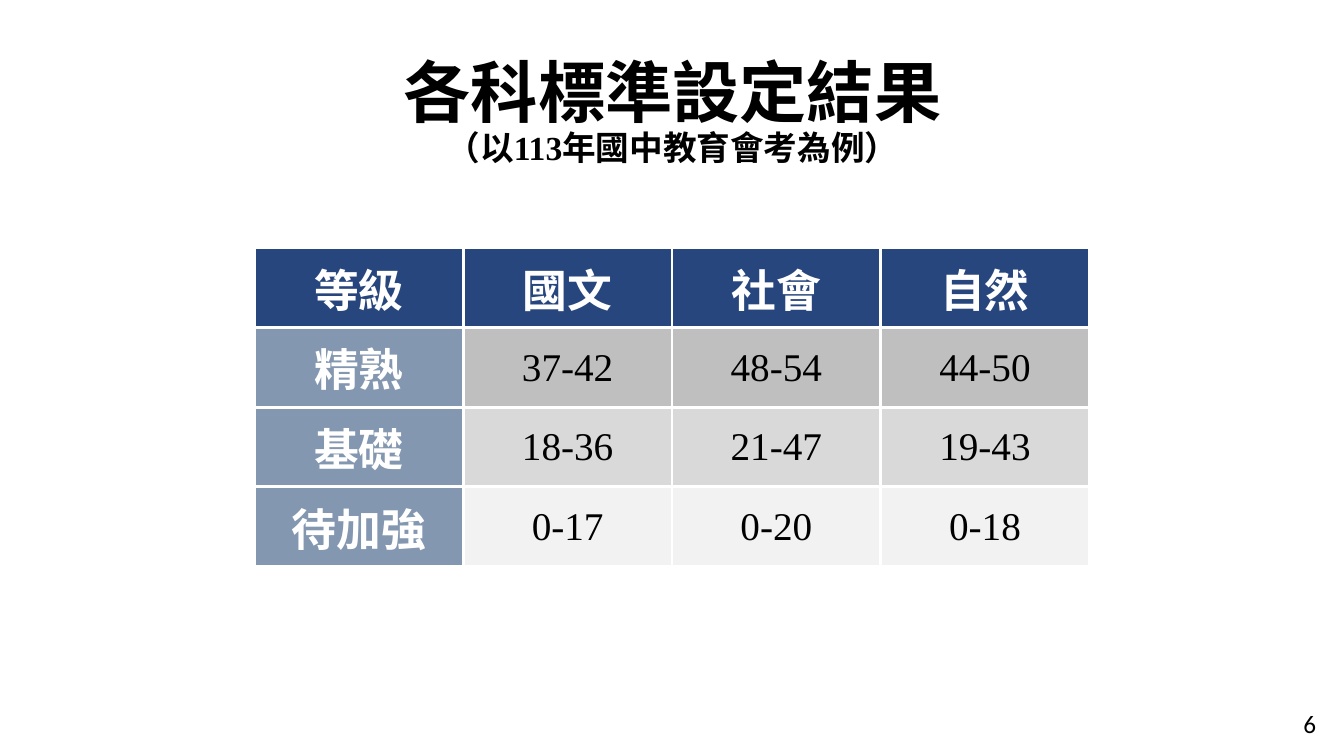
from lxml import etree
from pptx import Presentation
from pptx.dml.color import RGBColor
from pptx.enum.text import MSO_ANCHOR, MSO_AUTO_SIZE, PP_ALIGN
from pptx.oxml.ns import qn
from pptx.util import Inches, Pt

CENTER, MIDDLE, NO_FIT = PP_ALIGN.CENTER, MSO_ANCHOR.MIDDLE, MSO_AUTO_SIZE.NONE

HEADING = "各科標準設定結果"
SUBTITLE = [("（以", "Calibri"), ("113", "Times New Roman"), ("年國中教育會考為例）", "Calibri")]
SCORES = [
    ("等級", "國文", "社會", "自然"),
    ("精熟", "37-42", "48-54", "44-50"),
    ("基礎", "18-36", "21-47", "19-43"),
    ("待加強", "0-17", "0-20", "0-18"),
]
PAGE_NUMBER = "6"

WIDTH, HEIGHT = 13.33, 7.5
COLUMN_WIDTH, ROW_HEIGHT, TABLE_TOP = 2.07, 0.79, 2.46
HEADER_FILL, LEVEL_FILL = "27467D", "8497B0"
SCORE_FILLS = ["BFBFBF", "D9D9D9", "F2F2F2"]
HEADER_MARGINS = (0.1, 0.05, 0.1, 0.05)
LEVEL_MARGINS = (0.02, 0, 0.02, 0)
SCORE_MARGINS = (0.01, 0.01, 0.01, 0)
LABEL_FONT = {"name": "Times New Roman", "size": Pt(32), "bold": True}
SCORE_FONT = {"name": "Times New Roman", "size": Pt(28), "bold": False}
HEADING_FONT = {"name": "Times New Roman", "size": Pt(48), "bold": True}
SUBTITLE_FONT = {"size": Pt(24), "bold": True}
PAGE_FONT = {"name": "Calibri", "size": Pt(18)}


def apply(target, values):
    """Set each named attribute on the target."""
    for name, value in values.items():
        setattr(target, name, value)


def paint(color_format, color):
    """Give a colour format a hex colour."""
    color_format.rgb = RGBColor.from_string(color)


def add_text(paragraph, text, font, color):
    """Append a formatted run to a paragraph."""
    run = paragraph.add_run()
    run.text = text
    apply(run.font, font)
    paint(run.font.color, color)


def add_borders(cell, color, width):
    """Draw the four borders of a cell."""
    properties = cell._tc.get_or_add_tcPr()
    for position, side in enumerate(("lnL", "lnR", "lnT", "lnB")):
        line = etree.Element(qn(f"a:{side}"), w=str(Pt(width)))
        fill = etree.SubElement(line, qn("a:solidFill"))
        etree.SubElement(fill, qn("a:srgbClr"), val=color)
        properties.insert(position, line)


def cell_style(row, column):
    """Return fill, margins, font and text colour for a table position."""
    if row == 0:
        return HEADER_FILL, HEADER_MARGINS, LABEL_FONT, "FFFFFF"
    if column == 0:
        return LEVEL_FILL, LEVEL_MARGINS, LABEL_FONT, "FFFFFF"
    return SCORE_FILLS[row - 1], SCORE_MARGINS, SCORE_FONT, "000000"


def add_title(slide):
    """Fill the title placeholder with the heading and its subtitle."""
    title = slide.shapes.title
    apply(title, {"left": Inches(0.92), "top": Inches(0.4),
                  "width": Inches(11.5), "height": Inches(1.45)})
    apply(title.text_frame, {"word_wrap": True, "auto_size": NO_FIT, "vertical_anchor": MIDDLE})
    paragraph = title.text_frame.paragraphs[0]
    apply(paragraph, {"alignment": CENTER, "line_spacing": 0.9})
    add_text(paragraph, HEADING, HEADING_FONT, "000000")
    paragraph.add_line_break()
    for text, name in SUBTITLE:
        add_text(paragraph, text, {**SUBTITLE_FONT, "name": name}, "000000")


def add_score_table(slide):
    """Add the score ranges, centred across the slide."""
    rows, columns = len(SCORES), len(SCORES[0])
    width = columns * COLUMN_WIDTH
    table = slide.shapes.add_table(
        rows, columns, Inches((WIDTH - width) / 2), Inches(TABLE_TOP),
        Inches(width), Inches(rows * ROW_HEIGHT)).table
    for row, texts in enumerate(SCORES):
        for column, text in enumerate(texts):
            fill, margins, font, color = cell_style(row, column)
            cell = table.cell(row, column)
            cell.fill.solid()
            paint(cell.fill.fore_color, fill)
            sides = ("margin_left", "margin_top", "margin_right", "margin_bottom")
            apply(cell, dict(zip(sides, map(Inches, margins))))
            cell.vertical_anchor = MIDDLE
            paragraph = cell.text_frame.paragraphs[0]
            paragraph.alignment = CENTER
            add_text(paragraph, text, font, color)
            add_borders(cell, "FFFFFF", 2.25)


def add_page_number(slide):
    """Put the page number in the bottom right corner."""
    box = slide.shapes.add_textbox(Inches(12.83), Inches(6.98), Inches(0.57), Inches(0.4))
    apply(box.text_frame, {"word_wrap": True, "vertical_anchor": MIDDLE})
    add_text(box.text_frame.paragraphs[0], PAGE_NUMBER, PAGE_FONT, "000000")


def main():
    """Build and save the slide."""
    presentation = Presentation()
    apply(presentation, {"slide_width": Inches(WIDTH), "slide_height": Inches(HEIGHT)})
    slide = presentation.slides.add_slide(presentation.slide_layouts.get_by_name("Title Only"))
    add_score_table(slide)
    add_title(slide)
    add_page_number(slide)
    presentation.save("out.pptx")


if __name__ == "__main__":
    main()
